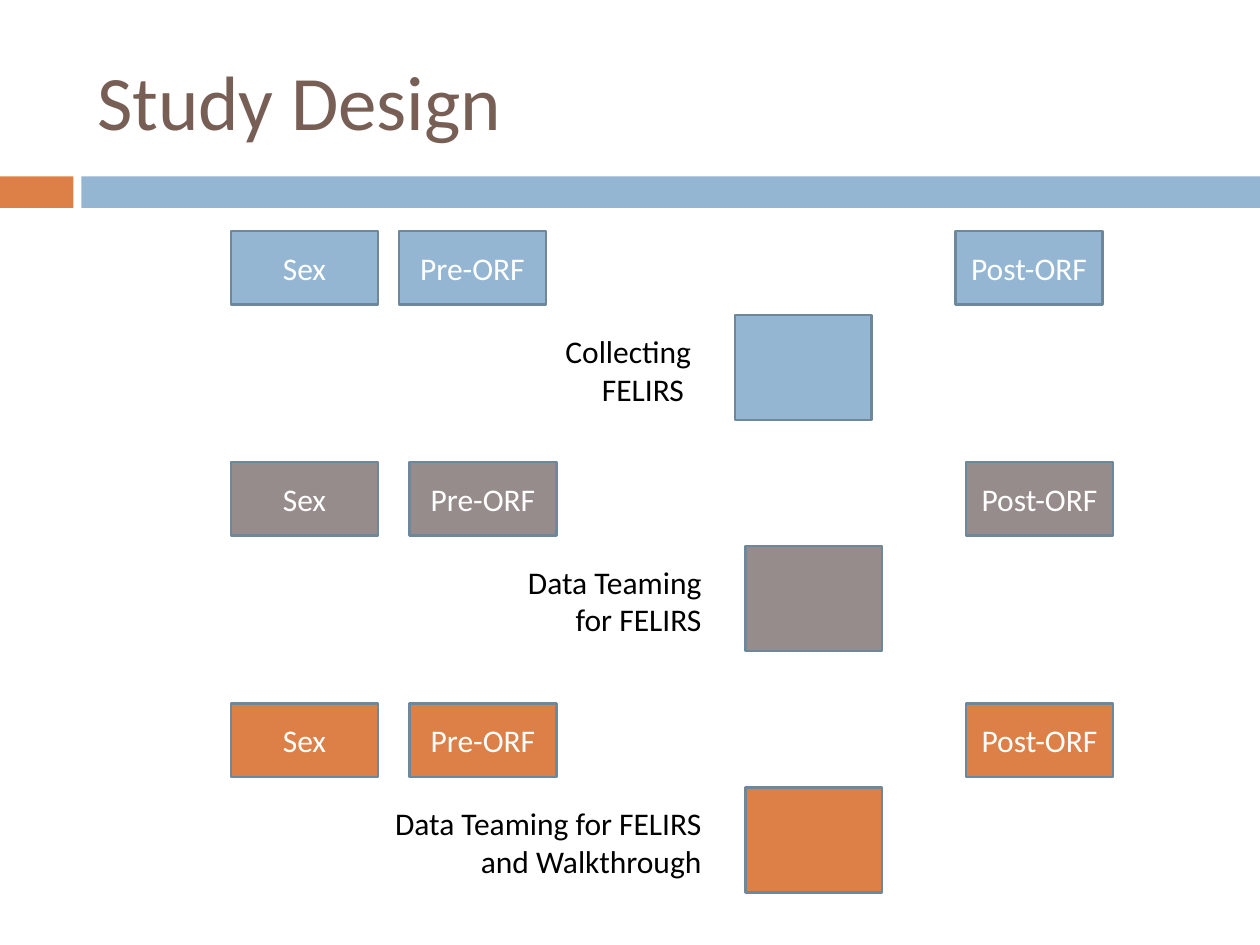
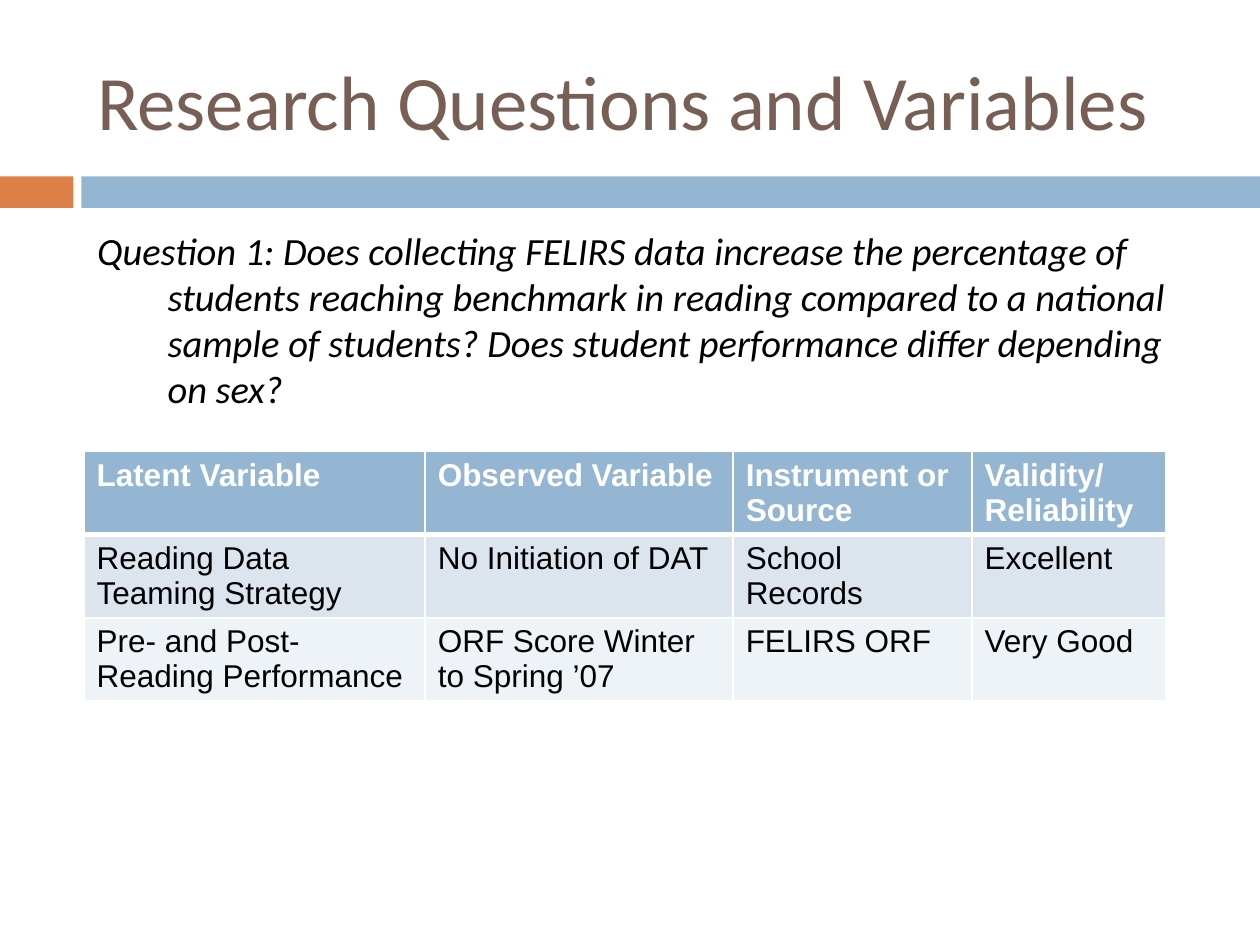
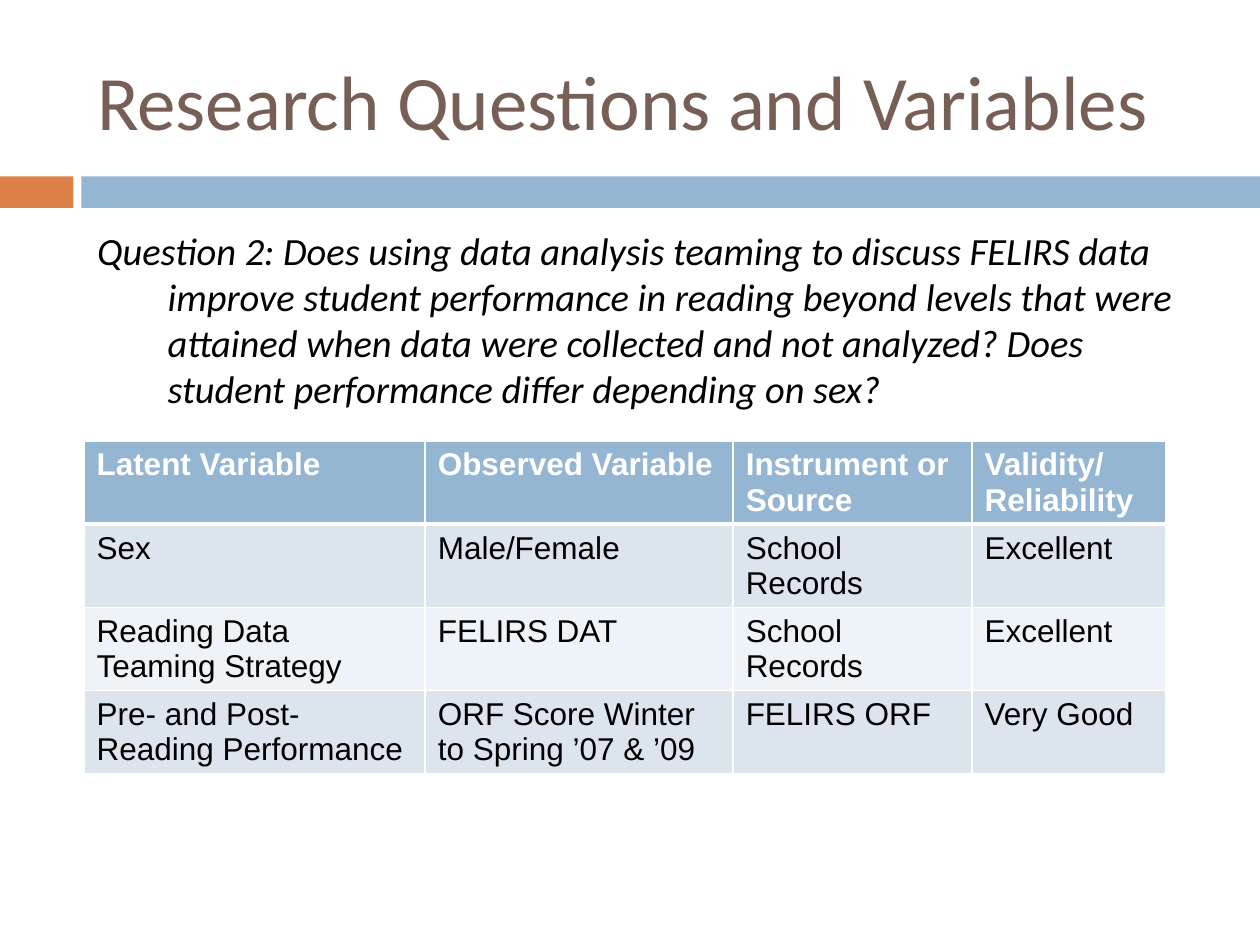
from lxml import etree
from pptx import Presentation
from pptx.dml.color import RGBColor
from pptx.enum.shapes import MSO_SHAPE
from pptx.enum.text import MSO_ANCHOR, PP_ALIGN
from pptx.oxml.ns import qn
from pptx.util import Pt

RECT = MSO_SHAPE.RECTANGLE
TOP, MIDDLE = MSO_ANCHOR.TOP, MSO_ANCHOR.MIDDLE
LEFT, CENTER, RIGHT = PP_ALIGN.LEFT, PP_ALIGN.CENTER, PP_ALIGN.RIGHT

ORANGE = RGBColor(0xDD, 0x80, 0x47)
BLUE = RGBColor(0x94, 0xB6, 0xD2)
GRAY = RGBColor(0x96, 0x8C, 0x8C)
OUTLINE = RGBColor(0x6D, 0x87, 0x9B)
BROWN = RGBColor(0x77, 0x5F, 0x55)
PALE = RGBColor(0xDC, 0xE5, 0xEE)
PALER = RGBColor(0xEE, 0xF3, 0xF7)
WHITE = RGBColor(0xFF, 0xFF, 0xFF)
BLACK = RGBColor(0x00, 0x00, 0x00)


def add_rect(s, x, y, w, h, fill, line=None):
    sp = s.shapes.add_shape(RECT, Pt(x), Pt(y), Pt(w), Pt(h))
    sp.shadow.inherit = False
    sp.fill.solid()
    sp.fill.fore_color.rgb = fill
    if line is None:
        sp.line.fill.background()
    else:
        sp.line.color.rgb = line
        sp.line.width = Pt(1.5)
    return sp


def write(tf, text, size, color, align=LEFT, anchor=TOP, font="Calibri"):
    tf.word_wrap = True
    tf.vertical_anchor = anchor
    p = tf.paragraphs[0]
    p.alignment = align
    r = p.add_run()
    r.text = text
    r.font.name = font
    r.font.size = Pt(size)
    r.font.color.rgb = color
    return p, r


prs = Presentation()
prs.slide_width = Pt(720)
prs.slide_height = Pt(540)

titles = ["Study Design"] + ["Research Questions and Variables"] * 2
slides = []
for title in titles:
    s = prs.slides.add_slide(prs.slide_layouts[6])
    add_rect(s, 0, 100.8, 42, 18, ORANGE)
    add_rect(s, 46.5, 100.8, 673.5, 18, BLUE)
    box = s.shapes.add_textbox(Pt(48.4), Pt(18), Pt(642), Pt(78))
    write(box.text_frame, title, 44, BROWN, anchor=MIDDLE)
    slides.append(s)

groups = [
    ("Collecting FELIRS ", BLUE, 132, 0, 126),
    ("Data Teaming for FELIRS", GRAY, 264, 6, 138),
    ("Data Teaming for FELIRS and Walkthrough", ORANGE, 402, 6, 192),
]
s = slides[0]
for label, color, y, shift, label_w in groups:
    measures = [("Sex", 132), ("Pre-ORF", 228 + shift), ("Post-ORF", 546 + shift)]
    for measure, x in measures:
        sp = add_rect(s, x, y, 84, 42, color, OUTLINE)
        write(sp.text_frame, measure, 18, WHITE, CENTER, MIDDLE)
    add_rect(s, 420 + shift, y + 48, 78, 60, color, OUTLINE)
    box = s.shapes.add_textbox(
        Pt(402 + shift - label_w), Pt(y + 54), Pt(label_w), Pt(51))
    write(box.text_frame, label, 18, BLACK, RIGHT)

header = ("Latent Variable", "Observed Variable", "Instrument or Source",
          "Validity/ Reliability")
col_widths = (195, 176, 136.5, 110.5)
row_h = 29.2
questions = [
    ("Question 1: Does collecting FELIRS data increase the percentage of "
     "students reaching benchmark in reading compared to a national sample of "
     "students? Does student performance differ depending on sex?",
     258,
     [("Reading Data Teaming Strategy", "No Initiation of DAT",
       "School Records", "Excellent"),
      ("Pre- and Post- Reading Performance", "ORF Score Winter to Spring ’07",
       "FELIRS ORF", "Very Good")]),
    ("Question 2: Does using data analysis teaming to discuss FELIRS data "
     "improve student performance in reading beyond levels that were attained "
     "when data were collected and not analyzed? Does student performance "
     "differ depending on sex?",
     252,
     [("Sex", "Male/Female", "School Records", "Excellent"),
      ("Reading Data Teaming Strategy", "FELIRS DAT",
       "School Records", "Excellent"),
      ("Pre- and Post- Reading Performance",
       "ORF Score Winter to Spring ’07 & ’09", "FELIRS ORF", "Very Good")]),
]
for s, (question, table_y, body) in zip(slides[1:], questions):
    box = s.shapes.add_textbox(Pt(48.4), Pt(126), Pt(642), Pt(354))
    p, r = write(box.text_frame, question, 22, BLACK)
    r.font.italic = True
    p.space_before = Pt(7)
    pPr = p._p.get_or_add_pPr()
    pPr.set("marL", str(Pt(40.3)))
    pPr.set("indent", str(-Pt(40.3)))

    rows = [header] + body
    table = s.shapes.add_table(
        len(rows), len(header), Pt(48), Pt(table_y),
        Pt(sum(col_widths)), Pt(row_h * len(rows))).table
    table.horz_banding = False
    for column, width in zip(table.columns, col_widths):
        column.width = Pt(width)
    for i, row in enumerate(rows):
        fill = BLUE if i == 0 else (PALER, PALE)[i % 2]
        widths = {"lnL": 1, "lnR": 1, "lnT": 3 if i == 1 else 1,
                  "lnB": 3 if i == 0 else 1}
        for j, text in enumerate(row):
            cell = table.cell(i, j)
            cell.margin_bottom = Pt(0.7)
            tcPr = cell._tc.get_or_add_tcPr()
            for side, width in widths.items():
                ln = etree.SubElement(tcPr, qn("a:" + side), w=str(Pt(width)))
                solid = etree.SubElement(ln, qn("a:solidFill"))
                etree.SubElement(solid, qn("a:srgbClr"), val=str(WHITE))
            cell.fill.solid()
            cell.fill.fore_color.rgb = fill
            p, r = write(cell.text_frame, text, 18,
                         WHITE if i == 0 else BLACK, font="Arial")
            r.font.bold = i == 0

prs.save("out.pptx")
